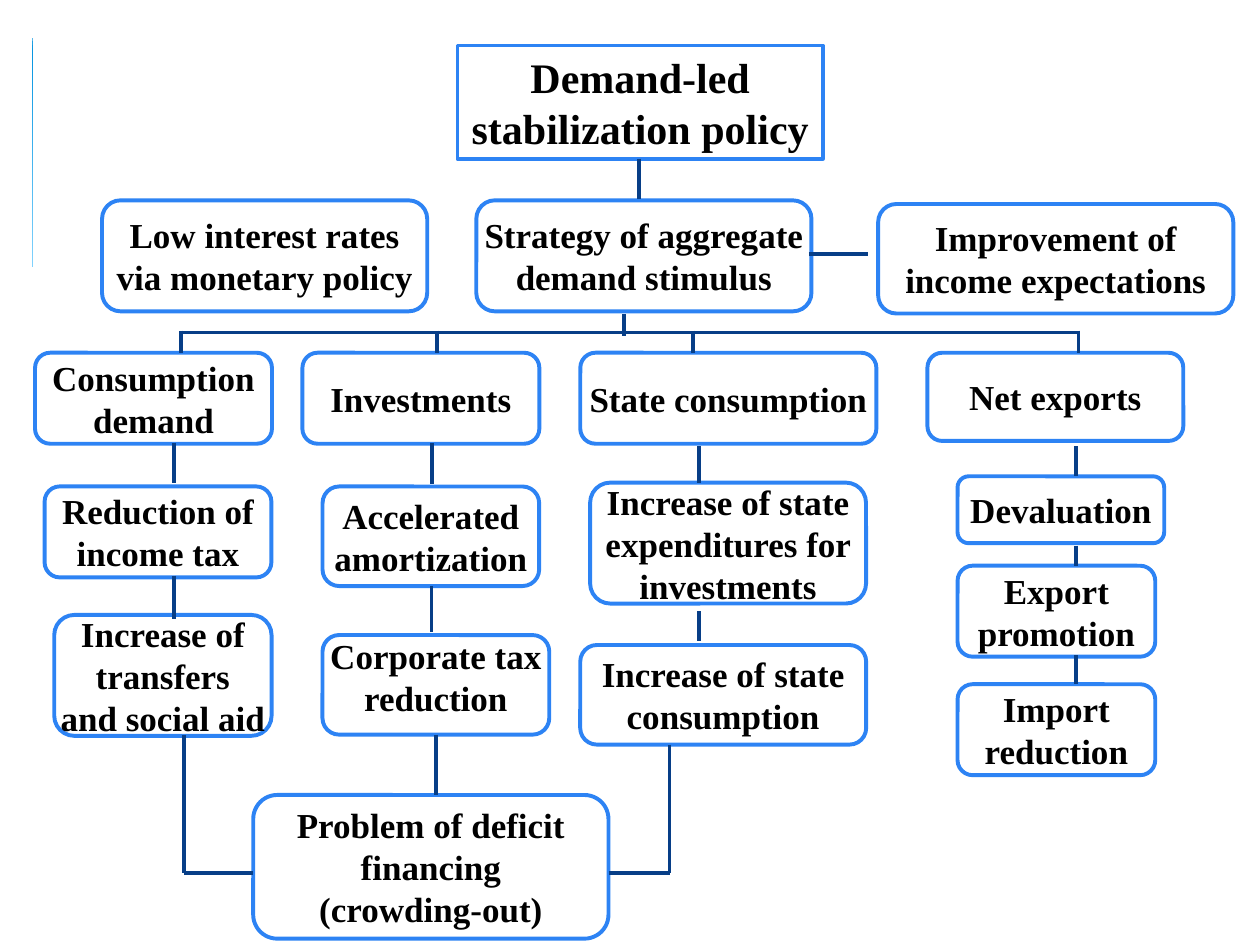
"""Build a flow chart slide on demand-led stabilization policy."""
from lxml.etree import SubElement
from pptx import Presentation
from pptx.dml.color import RGBColor
from pptx.enum.shapes import MSO_CONNECTOR, MSO_SHAPE
from pptx.enum.text import MSO_ANCHOR, MSO_AUTO_SIZE, PP_ALIGN
from pptx.oxml.ns import qn
from pptx.util import Pt

COLORS = {
    "text": "000000",
    "box": "FFFFFF",
    "border": "2D83F4",
    "connector": "073E87",
    "accent_top": "0293E0",
    "accent_bottom": "83D3FE",
}

TITLE = ("Demand-led\nstabilization policy", 261.4, 26, 208.8, 64.8)

STRATEGY_BOXES = [
    ("Low interest rates via monetary policy", 58.3, 114.5, 185.8, 63.4),
    ("Strategy of aggregate demand stimulus", 272.2, 114.5, 191.5, 63.4),
    ("Improvement of income expectations", 501.8, 116.6, 203, 62.6),
]
CONSUMPTION_BOXES = [
    ("Consumption\ndemand", 20, 201.6, 135.4, 52),
    ("Reduction of income tax", 25.5, 278, 129.6, 52),
    ("Increase of transfers\nand social aid", 31, 351.4, 124.2, 69.1),
]
INVESTMENT_BOXES = [
    ("Investments", 172.8, 201.6, 135.4, 52),
    ("Accelerated amortization", 184.3, 278, 123.8, 56.9),
    ("Corporate tax reduction", 184.3, 362.9, 129.6, 56.9, 9),
]
STATE_BOXES = [
    ("State consumption", 331.6, 201.6, 169.2, 52),
    ("Increase of state expenditures for investments", 337.2, 275.8, 157.7, 69.1),
    ("Increase of state consumption", 331.6, 368.6, 163.4, 56.9),
]
EXPORT_BOXES = [
    ("Net exports", 530, 201.6, 146.2, 50.4),
    ("Devaluation", 547.2, 272.2, 118.1, 38.2),
    ("Export promotion", 547.2, 323.3, 113, 52),
    ("Import reduction", 547.2, 391, 113, 52),
]
DEFICIT_BOX = ("Problem of deficit financing\n(crowding-out)", 144.7, 454.3, 203, 82.1)

BRANCH_Y = 190
DEFICIT_Y = 499
BRANCH_XS = [103.7, 249.8, 396, 616.3]
VERTICAL_LINKS = [
    (365.4, 90.7, 113.5),
    (356.4, 179.3, 192),
    (99.4, 253, 275.8),
    (99.4, 329, 353.5),
    (247, 253, 276.5),
    (246.6, 334.8, 361.4),
    (249.1, 419.8, 454.3),
    (399.6, 254.9, 275.8),
    (399.6, 349.2, 366.5),
    (614.9, 254.9, 272.2),
    (614.9, 311.8, 323.3),
    (614.9, 374.4, 391),
    (105.1, 419.8, DEFICIT_Y),
    (382.6, 425.5, DEFICIT_Y),
]
HORIZONTAL_LINKS = [
    (BRANCH_Y, BRANCH_XS[0], BRANCH_XS[-1]),
    (145.4, 462.2, 496.1),
    (DEFICIT_Y, 105.1, 144.7),
    (DEFICIT_Y, 347.8, 382.6),
]


class FlowChart:
    """Hold the chart style and draw its elements on one slide."""

    font_name = "Times New Roman"
    line_width = Pt(2.25)

    def __init__(self, slide):
        self.slide = slide

    @staticmethod
    def color(name):
        """Return the named colour."""
        return RGBColor.from_string(COLORS[name])

    def style(self, shape, text, size, bottom_inset=0):
        """Format a box and its centred text."""
        shape.fill.solid()
        shape.fill.fore_color.rgb = self.color("box")
        shape.line.color.rgb = self.color("border")
        shape.line.width = self.line_width
        frame = shape.text_frame
        frame.text = text
        frame.word_wrap = True
        frame.auto_size = MSO_AUTO_SIZE.NONE
        frame.vertical_anchor = MSO_ANCHOR.MIDDLE
        frame.margin_left = frame.margin_right = frame.margin_top = 0
        frame.margin_bottom = Pt(bottom_inset)
        for paragraph in frame.paragraphs:
            paragraph.alignment = PP_ALIGN.CENTER
            paragraph.space_before = Pt(0)
            paragraph.font.name = self.font_name
            paragraph.font.size = Pt(size)
            paragraph.font.bold = True
            paragraph.font.color.rgb = self.color("text")

    def title(self, text, left, top, width, height):
        """Turn the title placeholder into the rounded top box."""
        shape = self.slide.shapes.title
        shape.left, shape.top = Pt(left), Pt(top)
        shape.width, shape.height = Pt(width), Pt(height)
        geometry = SubElement(shape.element.spPr, qn("a:prstGeom"), prst="roundRect")
        SubElement(geometry, qn("a:avLst"))
        self.style(shape, text, 24)

    def box(self, text, left, top, width, height, bottom_inset=0):
        """Add a rounded box with text."""
        shape = self.slide.shapes.add_shape(
            MSO_SHAPE.ROUNDED_RECTANGLE, Pt(left), Pt(top), Pt(width), Pt(height))
        shape.shadow.inherit = False
        self.style(shape, text, 20, bottom_inset)

    def link(self, x1, y1, x2, y2):
        """Add a straight connector."""
        connector = self.slide.shapes.add_connector(
            MSO_CONNECTOR.STRAIGHT, Pt(x1), Pt(y1), Pt(x2), Pt(y2))
        connector.line.color.rgb = self.color("connector")
        connector.line.width = self.line_width
        SubElement(connector.element.spPr, qn("a:effectLst"))

    def accent(self, left, top, width, height):
        """Add a thin strip with a vertical gradient."""
        shape = self.slide.shapes.add_shape(
            MSO_SHAPE.RECTANGLE, Pt(left), Pt(top), Pt(width), Pt(height))
        shape.shadow.inherit = False
        shape.line.fill.background()
        shape.fill.gradient()
        shape.fill.gradient_angle = 270
        for stop, name in zip(shape.fill.gradient_stops, ("accent_top", "accent_bottom")):
            stop.color.rgb = self.color(name)


def main():
    """Build and save the slide."""
    presentation = Presentation()
    presentation.slide_width, presentation.slide_height = Pt(720), Pt(540)
    title_only = presentation.slide_layouts[5]
    chart = FlowChart(presentation.slides.add_slide(title_only))

    chart.accent(18, 21.6, 0.7, 131)
    chart.title(*TITLE)
    columns = CONSUMPTION_BOXES + INVESTMENT_BOXES + STATE_BOXES + EXPORT_BOXES
    for box in STRATEGY_BOXES + columns + [DEFICIT_BOX]:
        chart.box(*box)

    branches = [(x, BRANCH_Y - 1, 202) for x in BRANCH_XS]
    for x, top, bottom in VERTICAL_LINKS + branches:
        chart.link(x, top, x, bottom)
    for y, left, right in HORIZONTAL_LINKS:
        chart.link(left, y, right, y)

    presentation.save("out.pptx")


if __name__ == "__main__":
    main()
